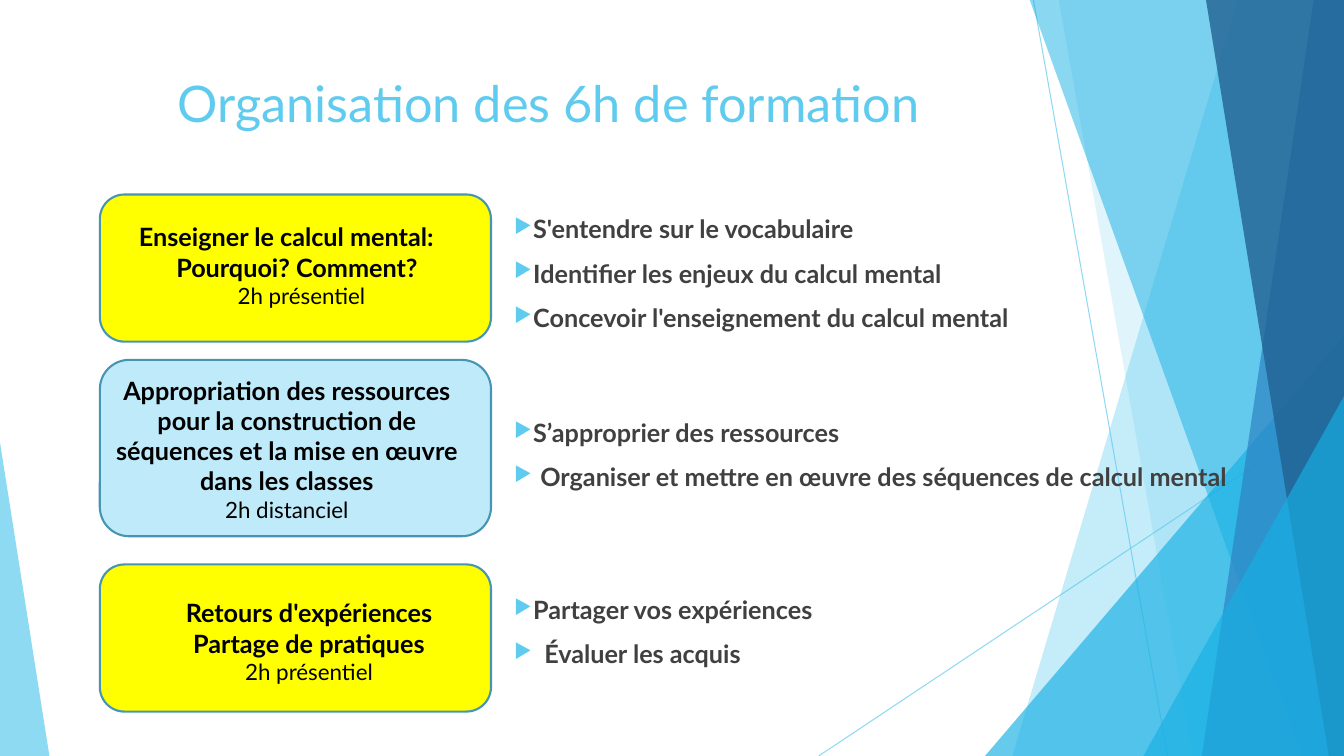
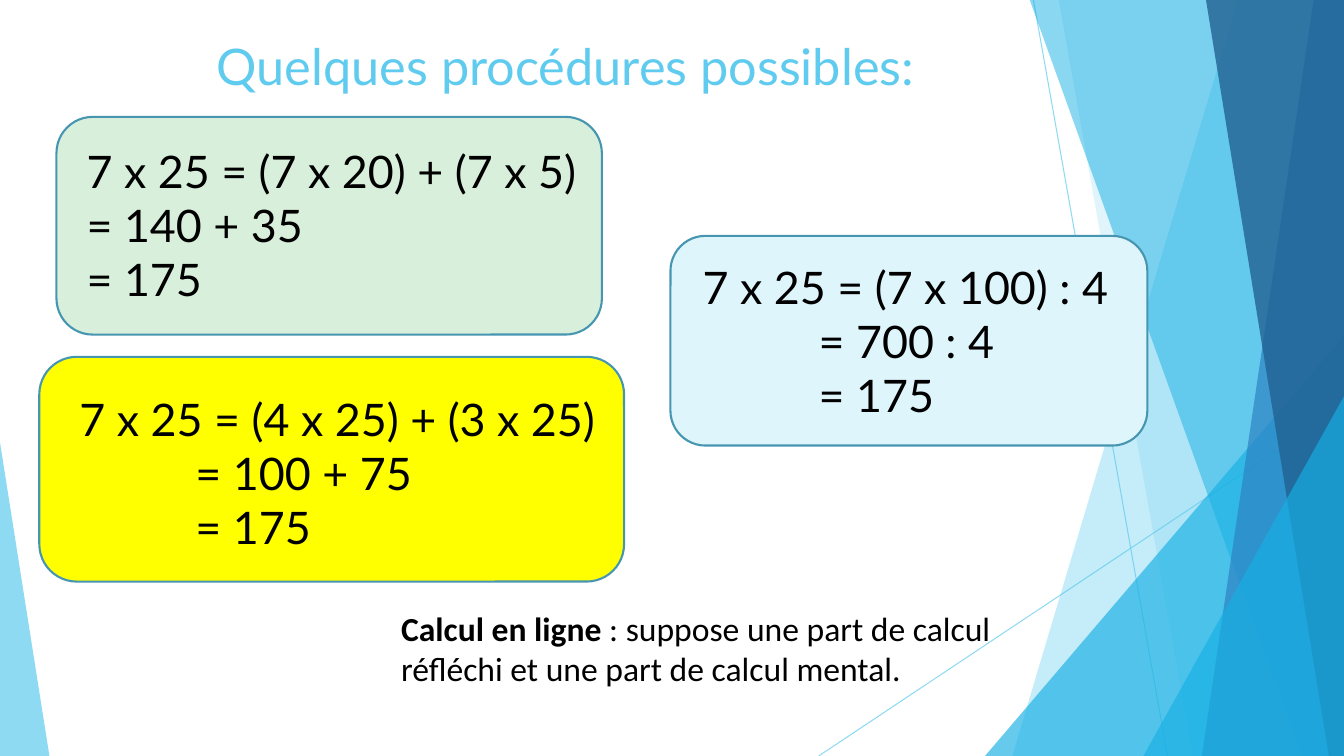
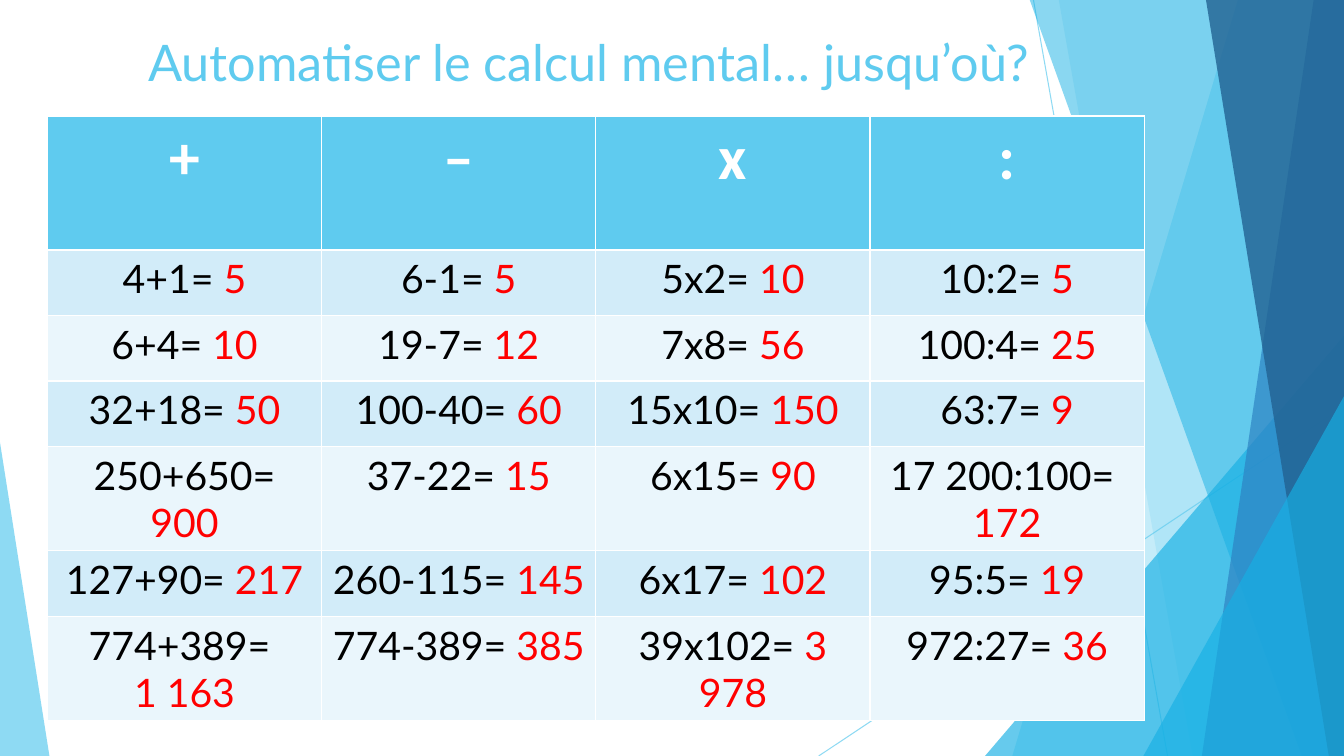
import lxml.etree
import pptx
import pptx.dml.color
import pptx.enum.shapes
import pptx.enum.text
import pptx.oxml.ns
import pptx.util

Inches = pptx.util.Inches
Pt = pptx.util.Pt
SHAPES = pptx.enum.shapes.MSO_SHAPE
ALIGN = pptx.enum.text.PP_ALIGN
CENTER = "center"

WIDTH, HEIGHT = 13.33, 7.5
BLEED = 0.01

THEME = {
    "colors": {
        "sky": "5FCBEF", "azure": "17B0E4", "blue": "2E83C3", "navy": "226292",
        "outline": "4696B1", "yellow": "FFFF00", "pale": "BFEAF9", "ice": "DFF5FC",
        "mint": "D8F0DB", "band": "D2ECF9", "light": "EAF6FC",
        "black": "000000", "gray": "404040", "white": "FFFFFF", "red": "FF0000",
    },
    "text": {
        "title": ("Lato", 36, False, "sky"),
        "goal": ("Lato", 18, True, "gray"),
        "session": ("Lato", 18, True, "black"),
        "duration": ("Lato", 16, False, "black"),
        "calculation": ("Lato", 32, False, "black"),
        "term": ("Calibri", 24, True, "black"),
        "note": ("Calibri", 24, False, "black"),
        "operator": ("Calibri", 44, True, "white"),
        "question": ("Lato", 28, False, "black"),
        "answer": ("Lato", 28, False, "red"),
    },
    "outline_width": 1.5,
    "thin_line": 0.75,
}

BACKDROP = [
    ("line", (10.25, 0, 11.58, HEIGHT), "sky", 70),
    ("line", (WIDTH, 4.03, 8.12, HEIGHT), "sky", 70),
    ("band", (12.28, 10.04), "sky", 36),
    ("band", (10.5, 11.83), "sky", 20),
    ("triangle", (9.77, 3.33, 3.56, 1), "azure", 66),
    ("band", (10.21, 12.91), "azure", 50),
    ("band", (13.03, 11.92), "blue", 70),
    ("band", (11.96, 13.18), "navy", 80),
    ("triangle", (11.34, 3.93, 1.99, 1), "azure", 66),
    ("triangle", (0, 4.39, 0.49, 0), "sky", 70),
]

PROGRAMME = {
    "title": ("Organisation des 6h de formation", (0.74, 0.67, 9.4, 0.75)),
    "cards": [
        ((0.99, 1.93, 3.88, 1.46), "yellow", (1.28, 2.15, 3.42, 0.98), [
            (0, ("session", "Enseigner le calcul mental:")),
            (0.37, ("session", "Pourquoi? Comment?")),
            (CENTER, ("duration", "2h présentiel")),
        ]),
        ((0.99, 3.57, 3.88, 1.75), "pale", (0.99, 3.67, 3.71, 1.62), [
            (CENTER, ("session", "Appropriation des ressources")),
            (CENTER, ("session", "pour la construction de séquences et la mise en œuvre dans les classes")),
            (CENTER, ("duration", "2h distanciel")),
        ]),
        ((0.99, 5.6, 3.88, 1.46), "yellow", (1.43, 5.88, 3.27, 1.01), [
            (CENTER, ("session", "Retours d'expériences")),
            (CENTER, ("session", "Partage de pratiques")),
            (CENTER, ("duration", "2h présentiel")),
        ]),
    ],
}
GOALS_BOX = (0.49, 1.63, 12.46, 5.61)
GOALS_TOP, BULLET_LEFT, GOAL_GAP = 0.49, 4.51, 10
GOALS = [
    (0, [("S'entendre sur le vocabulaire", 0.19),
         ("Identifier les enjeux du calcul mental", 0.19),
         ("Concevoir l'enseignement du calcul mental", 0.19)]),
    (60.5, [("S’approprier des ressources", 0.19),
            ("Organiser et mettre en œuvre des séquences de calcul mental", 0.26)]),
    (73.5, [("Partager vos expériences", 0.19),
            ("Évaluer les acquis", 0.3)]),
]

EQUALS_INDENT = 1.15
PROCEDURES = {
    "title": ("Quelques procédures possibles:", (0.91, 0.3, 9.4, 0.7)),
    "cards": [
        ((0.56, 1.16, 5.41, 2.16), "mint", (0.76, 1.38, 5.21, 1.72), [
            (0, ("calculation", "7 x 25 = (7 x 20) + (7 x 5)")),
            (0, ("calculation", "= 140 + 35")),
            (0, ("calculation", "= 175")),
        ]),
        ((6.65, 2.34, 4.73, 2.08), "ice", (6.87, 2.53, 4.48, 2.02), [
            (0, ("calculation", "7 x 25 = (7 x 100) : 4")),
            (EQUALS_INDENT, ("calculation", "= 700 : 4")),
            (EQUALS_INDENT, ("calculation", "= 175")),
        ]),
        ((0.39, 3.54, 5.8, 2.23), "yellow", (0.69, 3.84, 5.5, 1.72), [
            (0, ("calculation", "7 x 25 = (4 x 25) + (3 x 25)")),
            (EQUALS_INDENT, ("calculation", "= 100 + 75")),
            (EQUALS_INDENT, ("calculation", "= 175")),
        ]),
    ],
}
NOTE_BOX = (3.73, 5.98, 6.58, 0.91)
NOTE = [
    (0.15, ("term", "Calcul en ligne "), ("note", ": suppose une part de calcul")),
    (0.15, ("note", "réfléchi et une part de calcul mental.")),
]

AUTOMATION = {
    "title": ("Automatiser le calcul mental… jusqu’où? ", (0.95, 0.26, 9.91, 0.71)),
    "cards": [],
}
STACKED = "|"
TABLE_LEFT, TABLE_TOP, COLUMN_WIDTH = 0.47, 1.15, 2.72
HEADER_HEIGHT, ROW_HEIGHT = 1.33, 0.65
OPERATORS = ["+", "–", "x", ":"]
CALCULATIONS = [
    ["4+1= 5", "6-1= 5", "5x2= 10", "10:2= 5"],
    ["6+4= 10", "19-7= 12", "7x8= 56", "100:4= 25"],
    ["32+18= 50", "100-40= 60", "15x10= 150", "63:7= 9"],
    ["250+650= 900", "37-22= 15", "6x15= 90", "17 200:100= |172"],
    ["127+90= 217", "260-115= 145", "6x17= 102", "95:5= 19"],
    ["774+389= |1 163", "774-389= 385", "39x102= 3 978", "972:27= 36"],
]


def color(name):
    return pptx.dml.color.RGBColor.from_string(THEME["colors"][name])


def inches(values):
    return [Inches(value) for value in values]


def assign(target, values):
    for name, value in values.items():
        setattr(target, name, value)


def add_xml(parent, tag, **attributes):
    return lxml.etree.SubElement(parent, pptx.oxml.ns.qn(tag), attributes)


def fill(target, name):
    target.fill.solid()
    target.fill.fore_color.rgb = color(name)


def add_run(paragraph, style, text):
    name, size, bold, color_name = THEME["text"][style]
    run = paragraph.add_run()
    run.text = text
    assign(run.font, {"name": name, "size": Pt(size), "bold": bold})
    run.font.color.rgb = color(color_name)


def write(frame, paragraphs):
    for index, (placement, *runs) in enumerate(paragraphs):
        paragraph = frame.add_paragraph() if index else frame.paragraphs[0]
        if placement == CENTER:
            paragraph.alignment = ALIGN.CENTER
        elif placement:
            paragraph._p.get_or_add_pPr().set("marL", str(Inches(placement)))
        for style, text in runs:
            add_run(paragraph, style, text)


def add_text(slide, box, paragraphs):
    frame = slide.shapes.add_textbox(*inches(box)).text_frame
    frame.word_wrap = True
    write(frame, paragraphs)
    return frame


def add_card(slide, box, fill_name, text_box, paragraphs):
    card = slide.shapes.add_shape(SHAPES.ROUNDED_RECTANGLE, *inches(box))
    card.shadow.inherit = False
    fill(card, fill_name)
    card.line.color.rgb = color("outline")
    card.line.width = Pt(THEME["outline_width"])
    add_text(slide, text_box, paragraphs)


def draw_line(slide, ends):
    return slide.shapes.add_connector(pptx.enum.shapes.MSO_CONNECTOR.STRAIGHT, *inches(ends))


def draw_band(slide, edges):
    top_x, bottom_x = edges
    corners = [(top_x, -BLEED), (WIDTH, -BLEED), (WIDTH, HEIGHT), (bottom_x, HEIGHT)]
    start, *others = [inches(corner) for corner in corners]
    builder = slide.shapes.build_freeform(*start, scale=1.0)
    builder.add_line_segments(others, close=True)
    return builder.convert_to_shape()


def draw_triangle(slide, geometry):
    left, top, width, apex = geometry
    box = inches((left, top, width, HEIGHT - top))
    triangle = slide.shapes.add_shape(SHAPES.ISOSCELES_TRIANGLE, *box)
    triangle.adjustments[0] = apex
    return triangle


def draw_backdrop(slide):
    draw = {"line": draw_line, "band": draw_band, "triangle": draw_triangle}
    for kind, geometry, color_name, opacity in BACKDROP:
        shape = draw[kind](slide, geometry)
        properties = shape._element.spPr
        if kind == "line":
            shape.line.color.rgb = color(color_name)
            shape.line.width = Pt(THEME["thin_line"])
            add_xml(properties, "a:effectLst")
        else:
            shape.shadow.inherit = False
            fill(shape, color_name)
            shape.line.fill.background()
        for paint in properties.iter(pptx.oxml.ns.qn("a:srgbClr")):
            add_xml(paint, "a:alpha", val=str(opacity * 1000))


def move_to_layout(slide, layout):
    for placeholder in list(layout.placeholders):
        layout.shapes.element.remove(placeholder._element)
    for shape in list(slide.shapes):
        layout.shapes.element.append(shape._element)


def add_goals(slide):
    goals = [(gap if first else GOAL_GAP, text, hang)
             for gap, items in GOALS
             for first, (text, hang) in zip([True] + [False] * len(items), items)]
    frame = add_text(slide, GOALS_BOX, [(0, ("goal", text)) for _, text, _ in goals])
    frame.margin_top = Inches(GOALS_TOP)
    for paragraph, (gap, _, hang) in zip(frame.paragraphs, goals):
        paragraph.space_before = Pt(gap)
        properties = paragraph._p.get_or_add_pPr()
        properties.set("marL", str(Inches(BULLET_LEFT + hang)))
        properties.set("indent", str(-Inches(hang)))
        tint = add_xml(properties, "a:buClr")
        add_xml(tint, "a:srgbClr", val=THEME["colors"]["sky"])
        add_xml(properties, "a:buSzPct", val="80000")
        add_xml(properties, "a:buChar", char="▶")


def add_note(slide):
    add_text(slide, NOTE_BOX, NOTE)


def calculation_paragraphs(calculation):
    question, equals, answer = calculation.partition("= ")
    asked = ("question", question + equals)
    given = ("answer", answer.lstrip(STACKED))
    if answer.startswith(STACKED):
        return [(CENTER, asked), (CENTER, given)]
    return [(CENTER, asked, given)]


def add_calculations(slide):
    rows, columns = len(CALCULATIONS) + 1, len(OPERATORS)
    size = (COLUMN_WIDTH * columns, HEADER_HEIGHT + ROW_HEIGHT * len(CALCULATIONS))
    table = slide.shapes.add_table(rows, columns, *inches((TABLE_LEFT, TABLE_TOP, *size))).table
    assign(table, {"first_row": True, "horz_banding": False})
    for column in table.columns:
        column.width = Inches(COLUMN_WIDTH)
    content = [[[(CENTER, ("operator", sign))] for sign in OPERATORS]]
    content += [[calculation_paragraphs(item) for item in line] for line in CALCULATIONS]
    for row_index, line in enumerate(content):
        table.rows[row_index].height = Inches(ROW_HEIGHT if row_index else HEADER_HEIGHT)
        fill_name = ("light", "band")[row_index % 2] if row_index else "sky"
        for column_index, paragraphs in enumerate(line):
            cell = table.cell(row_index, column_index)
            fill(cell, fill_name)
            write(cell.text_frame, paragraphs)


def main():
    presentation = pptx.Presentation()
    assign(presentation, {"slide_width": Inches(WIDTH), "slide_height": Inches(HEIGHT)})
    layout = presentation.slide_layouts[6]
    pages = [(PROGRAMME, add_goals), (PROCEDURES, add_note), (AUTOMATION, add_calculations)]
    for index, (page, add_content) in enumerate(pages):
        slide = presentation.slides.add_slide(layout)
        if index == 0:
            draw_backdrop(slide)
            move_to_layout(slide, layout)
        title, box = page["title"]
        add_text(slide, box, [(CENTER, ("title", title))])
        for card in page["cards"]:
            add_card(slide, *card)
        add_content(slide)
    presentation.save("out.pptx")


if __name__ == "__main__":
    main()
